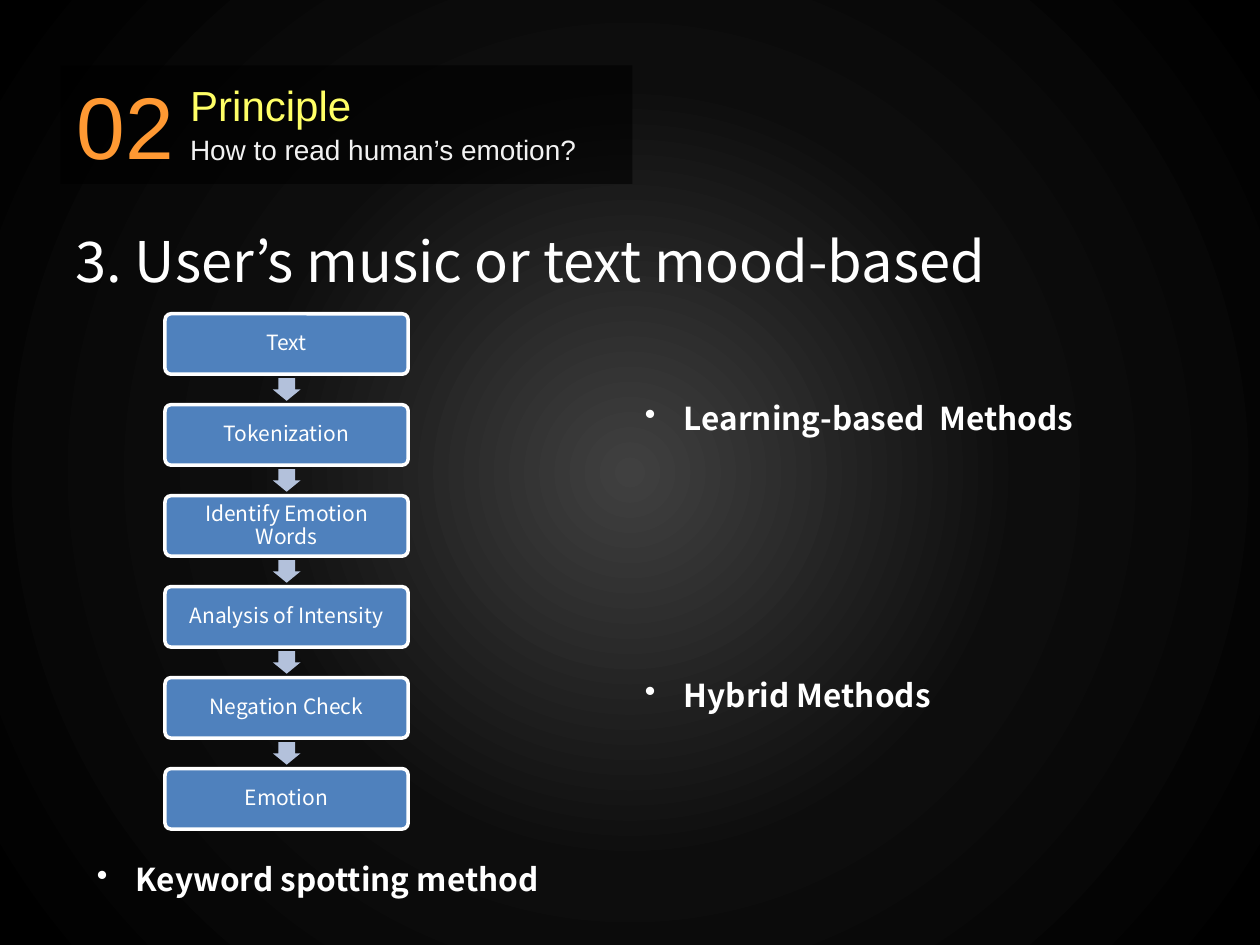
from dataclasses import dataclass

from pptx import Presentation
from pptx.dml.color import RGBColor
from pptx.enum.shapes import MSO_SHAPE
from pptx.enum.text import MSO_ANCHOR, MSO_AUTO_SIZE, PP_ALIGN
from pptx.oxml import parse_xml
from pptx.oxml.ns import nsdecls
from pptx.oxml.xmlchemy import OxmlElement
from pptx.util import Inches, Pt

BLACK = RGBColor(0x00, 0x00, 0x00)
WHITE = RGBColor(0xFF, 0xFF, 0xFF)
PALE = RGBColor(0xF2, 0xF2, 0xF2)
YELLOW = RGBColor(0xFF, 0xFF, 0x66)
ORANGE = RGBColor(0xFF, 0x99, 0x33)
BLUE = RGBColor(0x4F, 0x81, 0xBD)
ARROW_BLUE = RGBColor(0xB3, 0xC1, 0xDB)
HEAD_FONT = "Arial"
BODY_FONT = "Noto Sans CJK KR"

WIDTH, HEIGHT = Inches(10), Inches(7.5)
COLUMN, ROW = WIDTH / 100, HEIGHT / 75
STEPS = ["Text", "Tokenization", "Identify Emotion Words",
         "Analysis of Intensity", "Negation Check", "Emotion"]


@dataclass
class Box:
    """An area measured in grid columns and rows."""
    left: float
    top: float
    width: float
    height: float

    def inner(self, left, top, width, height):
        """Return an area placed relative to this one."""
        return Box(self.left + left, self.top + top, width, height)

    def emu(self):
        """Return left, top, width and height in slide units."""
        return (round(self.left * COLUMN), round(self.top * ROW),
                round(self.width * COLUMN), round(self.height * ROW))


def place(shape, area):
    """Move a placeholder to an area."""
    shape.left, shape.top, shape.width, shape.height = area.emu()


def write(shape, text, font, size, color, bold=False, align=PP_ALIGN.LEFT):
    """Write one formatted run and return its paragraph."""
    shape.text_frame.word_wrap = True
    para = shape.text_frame.paragraphs[0]
    para.alignment = align
    span = para.add_run()
    span.text = text
    span.font.name, span.font.size = font, Pt(size)
    span.font.bold, span.font.color.rgb = bold, color
    return para


def add_label(page, area, *args, **kwargs):
    """Add a text box that grows with its text and return its paragraph."""
    box = page.shapes.add_textbox(*area.emu())
    para = write(box, *args, **kwargs)
    box.text_frame.auto_size = MSO_AUTO_SIZE.SHAPE_TO_FIT_TEXT
    return para


def add_block(page, kind, area, color):
    """Add a flat filled shape without outline."""
    block = page.shapes.add_shape(kind, *area.emu())
    block.shadow.inherit = False
    block.fill.solid()
    block.fill.fore_color.rgb = color
    block.line.fill.background()
    return block


def set_bullet(para, mark, indent):
    """Give a paragraph a bullet with a hanging indent, or neither."""
    props = para._p.get_or_add_pPr()
    props.set("marL", str(Inches(indent)))
    props.set("indent", str(-Inches(indent)))
    bullet = OxmlElement("a:buChar" if mark else "a:buNone")
    if mark:
        bullet.set("char", mark)
    props.append(bullet)


def paint_background(page):
    """Fill the background with a round gradient from grey to black."""
    stops = "".join(
        f'<a:gs pos="{share * 1000}"><a:srgbClr val="{color}"/></a:gs>'
        for share, color in [(0, "404040"), (50, "0D0D0D"), (100, "000000")])
    page.element.cSld.insert(0, parse_xml(
        f'<p:bg {nsdecls("p", "a")}><p:bgPr><a:gradFill><a:gsLst>{stops}</a:gsLst>'
        '<a:path path="circle"><a:fillToRect l="50000" t="50000" r="50000" b="50000"/>'
        '</a:path></a:gradFill><a:effectLst/></p:bgPr></p:bg>'))


def add_header(page, area):
    """Place the section number, title and subtitle on a dark band."""
    band = add_block(page, MSO_SHAPE.RECTANGLE, area, BLACK)
    alpha = OxmlElement("a:alpha")
    alpha.set("val", "60000")
    band.element.spPr.find(".//{*}srgbClr").append(alpha)
    title = page.shapes.title
    title.element.addprevious(band.element)
    place(title, area.inner(9.3, 0.6, 31.4, 5))
    title.text_frame.vertical_anchor = MSO_ANCHOR.TOP
    title.text_frame.auto_size = MSO_AUTO_SIZE.NONE
    write(title, "Principle", HEAD_FONT, 24, YELLOW)
    add_label(page, area.inner(9.3, 4.8, 36.2, 3.7),
              "How to read human’s emotion?", HEAD_FONT, 16, PALE)
    add_label(page, area.inner(-0.6, 0, 11.5, area.height),
              "02", HEAD_FONT, 50, ORANGE, align=PP_ALIGN.CENTER)


def add_topic(page, area):
    """Write the topic line in the body placeholder."""
    body = page.placeholders[1]
    place(body, area)
    body.text_frame.auto_size = MSO_AUTO_SIZE.NONE
    para = write(body, "3. User’s music or text mood-based", BODY_FONT, 32, WHITE)
    para.space_before = Pt(0)
    set_bullet(para, None, 0)


def add_flow(page, area, steps):
    """Stack the steps evenly with an arrow in each gap."""
    height, arrow_width, arrow_height = 4.8, 1.8, 2.2
    pitch = (area.height - height) / (len(steps) - 1)
    for index, text in enumerate(steps):
        top = index * pitch
        if index:
            middle = top - (pitch - height) / 2
            arrow = add_block(page, MSO_SHAPE.RIGHT_ARROW, area.inner(
                (area.width - arrow_width) / 2, middle - arrow_height / 2,
                arrow_width, arrow_height), ARROW_BLUE)
            arrow.rotation = 90
            arrow.adjustments[0] = 0.6
        step = add_block(page, MSO_SHAPE.ROUNDED_RECTANGLE,
                         area.inner(0, top, area.width, height), BLUE)
        step.adjustments[0] = 0.1
        step.line.color.rgb, step.line.width = WHITE, Pt(2)
        frame = step.text_frame
        frame.vertical_anchor = MSO_ANCHOR.MIDDLE
        frame.margin_left = frame.margin_right = Inches(0.05)
        frame.margin_top = frame.margin_bottom = Inches(0.05)
        para = write(step, text, BODY_FONT, 12, WHITE, align=PP_ALIGN.CENTER)
        para.line_spacing = 0.9


def add_method(page, area, text):
    """Add one bold bulleted method name."""
    para = add_label(page, area, text, BODY_FONT, 18, WHITE, bold=True)
    set_bullet(para, "•", 0.31)
    para.font.color.rgb = WHITE


def main():
    """Build the slide and save it."""
    deck = Presentation()
    deck.slide_width, deck.slide_height = WIDTH, HEIGHT
    page = deck.slides.add_slide(deck.slide_layouts[1])
    paint_background(page)
    add_header(page, Box(4.8, 5.2, 45.4, 9.4))
    add_topic(page, Box(5, 17.5, 90, 6.6))
    add_flow(page, Box(13.1, 24.9, 19.3, 40.9), STEPS)
    add_method(page, Box(6.7, 67.8, 38.8, 4), "Keyword spotting method")
    add_method(page, Box(50.2, 31.2, 39.9, 4), "Learning-based  Methods")
    add_method(page, Box(50.2, 53.2, 39.9, 4), "Hybrid Methods")
    deck.save("out.pptx")


if __name__ == "__main__":
    main()
